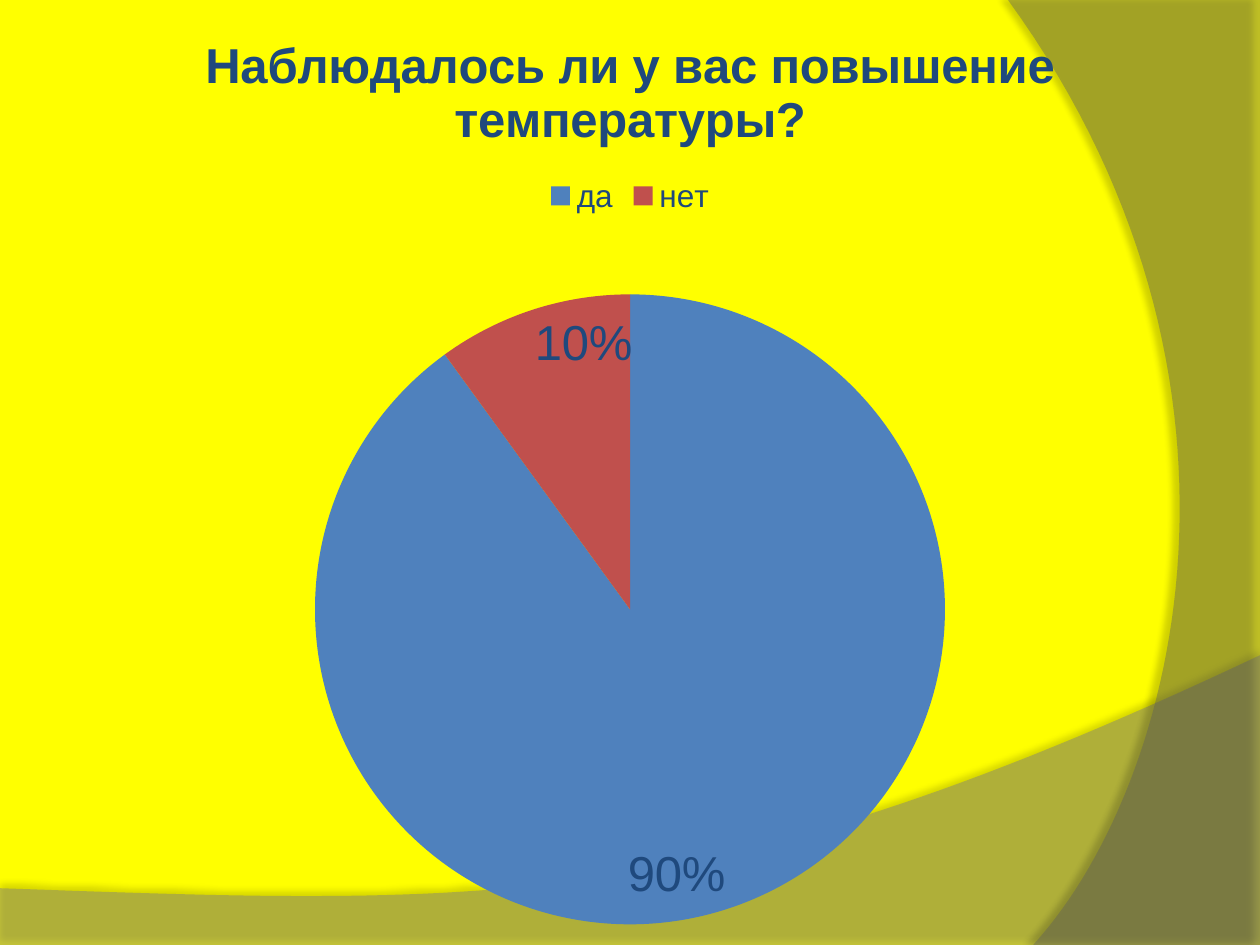
from lxml import etree
from pptx import Presentation
from pptx import util as u
from pptx.chart.data import CategoryChartData
from pptx.dml.color import RGBColor
from pptx.enum import chart as kinds
from pptx.oxml import parse_xml
from pptx.oxml.ns import nsdecls, qn

QUESTION = "Наблюдалось ли у вас повышение температуры?"
ANSWERS = {"да": (90, "4F81BD"), "нет": (10, "C0504D")}
NAVY = "1F497D"
WIDTH, HEIGHT = 25.4, 19.05


def paint(fill, color):
    """Fill solidly with a hex colour."""
    fill.solid()
    fill.fore_color.rgb = RGBColor.from_string(color)


def style_font(font, size, bold=False):
    """Set the shared chart typeface at one size."""
    font.name = "Arial"
    font.size = u.Pt(size)
    font.bold = bold
    font.color.rgb = RGBColor.from_string(NAVY)


def curve(start, first, second, end, steps=60):
    """Return points along a cubic curve, both ends included."""
    points = []
    for step in range(steps + 1):
        t = step / steps
        weights = ((1 - t) ** 3, 3 * t * (1 - t) ** 2, 3 * t * t * (1 - t), t ** 3)
        points.append(tuple(
            sum(w * value for w, value in zip(weights, axis))
            for axis in zip(start, first, second, end)))
    return points


def add_shadow(shape, opacity, distance, angle):
    """Give a shape a soft black outer shadow."""
    effects = parse_xml(
        f'<a:effectLst {nsdecls("a")}><a:outerShdw blurRad="{u.Pt(4)}" '
        f'dist="{u.Pt(distance)}" dir="{angle * 60000}" algn="ctr" rotWithShape="0">'
        f'<a:srgbClr val="000000"><a:alpha val="{opacity * 1000}"/></a:srgbClr>'
        '</a:outerShdw></a:effectLst>')
    shape.shadow.inherit = False
    properties = shape.fill._xPr
    properties.replace(properties.find(qn("a:effectLst")), effects)


def add_swoosh(page, box, points, color, opacity, shadow):
    """Draw a translucent outline from points given as fractions of the box."""
    left, top, width, height = box
    corners = [(u.Cm(left + width * x), u.Cm(top + height * y)) for x, y in points]
    builder = page.shapes.build_freeform(*corners[0])
    builder.add_line_segments(corners[1:], close=True)
    shape = builder.convert_to_shape()
    paint(shape.fill, color)
    tint = shape.fill._xPr.find(qn("a:solidFill"))[0]
    etree.SubElement(tint, qn("a:alpha"), val=str(opacity * 1000))
    shape.line.fill.background()
    add_shadow(shape, *shadow)


def add_background(page, box):
    """Colour the page and lay the wave and the side band over it."""
    left, top, width, height = box
    paint(page.background.fill, "FFFF00")
    wave_top, band_left = 13.21, 20.32
    wave = [(0, 1), (1, 1)] + curve((1, 0), (0.56, 0.9), (0.39, 0.86), (0, 0.8))
    add_swoosh(page, (left, top + wave_top, width, height - wave_top + 0.03),
               wave, "7F7F7F", 45, (35, 3.5, 270))
    band = [(1, 0), (1, 1)] + curve((0.1, 1), (0.68, 0.83), (1.09, 0.4), (0, 0))
    add_swoosh(page, (left + band_left, top, width - band_left, height),
               band, "5E5E5E", 40, (45, 4, 180))


def place_plot(chart, left, top, width, height):
    """Fix the inner plot area as fractions of the chart."""
    plot_area = chart.plots[0]._element.getparent()
    for layout in plot_area.findall(qn("c:layout")):
        plot_area.remove(layout)
    values = "".join(f'<c:{name} val="{value}"/>' for name, value in
                     zip("xywh", (left, top, width, height)))
    plot_area.insert(0, parse_xml(
        f'<c:layout {nsdecls("c")}><c:manualLayout><c:layoutTarget val="inner"/>'
        f'<c:xMode val="edge"/><c:yMode val="edge"/>{values}'
        '</c:manualLayout></c:layout>'))


def add_survey_pie(page, box):
    """Place the titled pie of answers in the box."""
    data = CategoryChartData()
    data.categories = list(ANSWERS)
    data.add_series(QUESTION, [value for value, _ in ANSWERS.values()])
    chart = page.shapes.add_chart(
        kinds.XL_CHART_TYPE.PIE, *map(u.Cm, box), data).chart
    style_font(chart.font, 18)

    chart.has_title = True
    chart.chart_title.include_in_layout = False
    para = chart.chart_title.text_frame.paragraphs[0]
    para.text = QUESTION
    style_font(para.font, 28, bold=True)

    chart.has_legend = True
    chart.legend.position = kinds.XL_LEGEND_POSITION.TOP
    chart.legend.include_in_layout = False
    style_font(chart.legend.font, 18)

    plot = chart.plots[0]
    plot.vary_by_categories = True
    plot.has_data_labels = True
    labels = plot.data_labels
    labels.show_percentage = True
    labels.show_value = False
    labels.number_format = "0%"
    labels.number_format_is_linked = False
    labels.position = kinds.XL_LABEL_POSITION.INSIDE_END
    style_font(labels.font, 28)
    for index, (_, color) in enumerate(ANSWERS.values()):
        paint(plot.series[0].points[index].format.fill, color)
    place_plot(chart, 0.25, 0.31, 0.5, 0.67)


def main():
    """Build and save the survey slide."""
    deck = Presentation()
    deck.slide_width, deck.slide_height = u.Cm(WIDTH), u.Cm(HEIGHT)
    page = deck.slides.add_slide(deck.slide_layouts[6])
    box = (0, 0, WIDTH, HEIGHT)
    add_background(page, box)
    add_survey_pie(page, box)
    deck.save("out.pptx")


if __name__ == "__main__":
    main()
